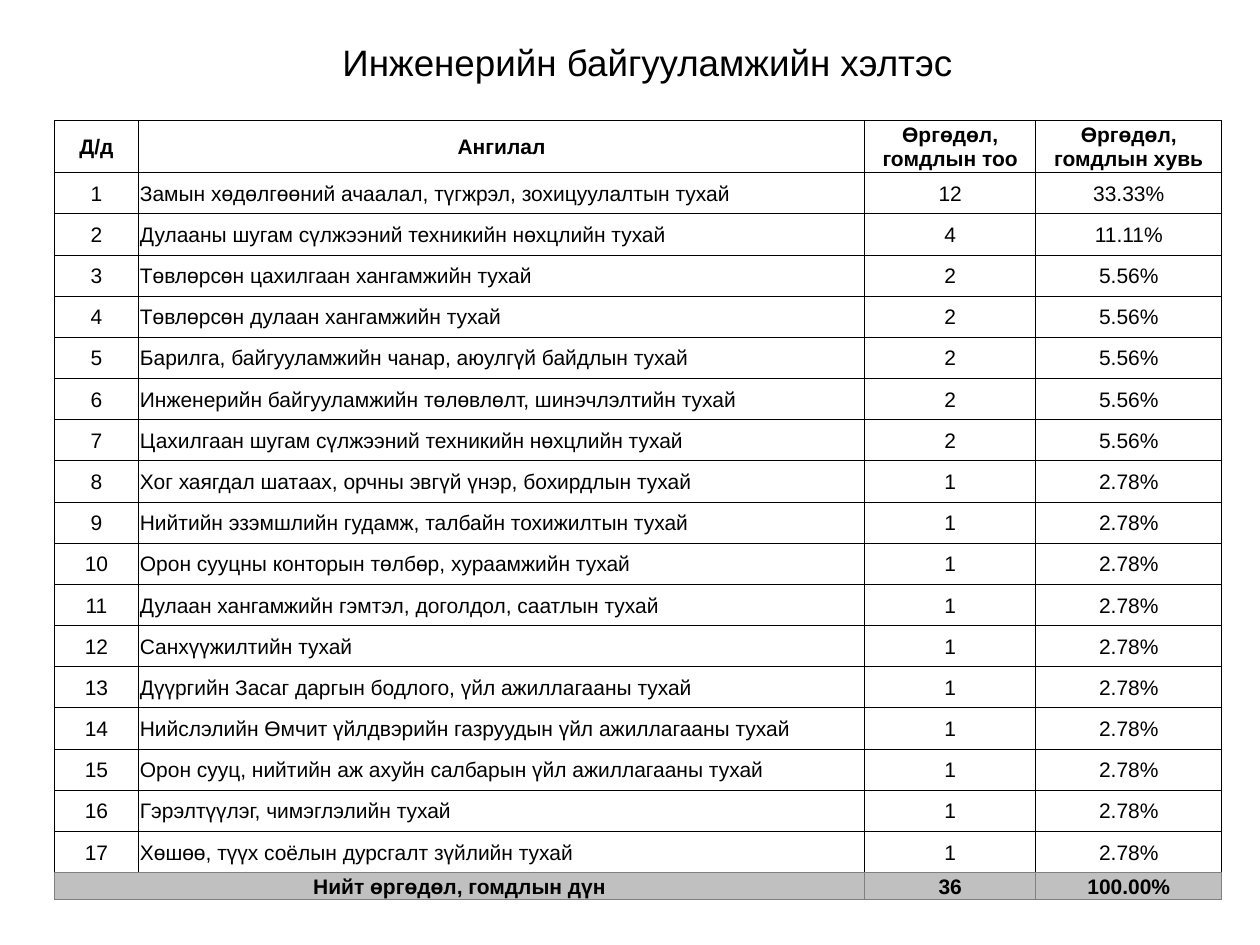
from dataclasses import dataclass
from typing import Any

from lxml.etree import SubElement
from pptx import Presentation
from pptx.dml.color import RGBColor
from pptx.enum.text import MSO_ANCHOR, PP_ALIGN
from pptx.oxml.ns import qn
from pptx.slide import Slide
from pptx.table import Table, _Cell
from pptx.util import Cm, Pt


@dataclass(frozen=True)
class Theme:
    """Colours, font and type sizes of the slide."""

    font: str = "Arial"
    title_size: float = 21
    table_size: float = 12
    text: str = "000000"
    paper: str = "FFFFFF"
    total_fill: str = "C0C0C0"
    grid: str = "000000"
    total_grid: str = "808080"
    grid_width: float = 0.5


@dataclass(frozen=True)
class Category:
    """A subject of complaints and how many were received."""

    name: str
    count: int


@dataclass(frozen=True)
class RowStyle:
    """The look shared by the cells of one kind of row."""

    height: float
    fill: str
    top: str
    side: str
    bottom: str
    bold: bool


THEME = Theme()
TITLE = "Инженерийн байгууламжийн хэлтэс"
HEADINGS = ("Д/д", "Ангилал", "Өргөдөл, гомдлын тоо", "Өргөдөл, гомдлын хувь")
TOTAL_LABEL = "Нийт өргөдөл, гомдлын дүн"
COLUMN_WIDTHS = (1.69, 14.64, 3.45, 3.75)
NAME_COLUMN = 1

HEADER = RowStyle(1.05, THEME.paper, THEME.grid, THEME.grid, THEME.grid, True)
BODY = RowStyle(0.83, THEME.paper, THEME.grid, THEME.grid, THEME.grid, False)
LAST = RowStyle(0.83, THEME.paper, THEME.grid, THEME.grid, THEME.total_grid, False)
TOTAL = RowStyle(
    0.54, THEME.total_fill, THEME.total_grid, THEME.total_grid, THEME.total_grid, True
)

CATEGORIES = (
    Category("Замын хөдөлгөөний ачаалал, түгжрэл, зохицуулалтын тухай", 12),
    Category("Дулааны шугам сүлжээний техникийн нөхцлийн тухай", 4),
    Category("Төвлөрсөн цахилгаан хангамжийн тухай", 2),
    Category("Төвлөрсөн дулаан хангамжийн тухай", 2),
    Category("Барилга, байгууламжийн чанар, аюулгүй байдлын тухай", 2),
    Category("Инженерийн байгууламжийн төлөвлөлт, шинэчлэлтийн тухай", 2),
    Category("Цахилгаан шугам сүлжээний техникийн нөхцлийн тухай", 2),
    Category("Хог хаягдал шатаах, орчны эвгүй үнэр, бохирдлын тухай", 1),
    Category("Нийтийн эзэмшлийн гудамж, талбайн тохижилтын тухай", 1),
    Category("Орон сууцны конторын төлбөр, хураамжийн тухай", 1),
    Category("Дулаан хангамжийн гэмтэл, доголдол, саатлын тухай", 1),
    Category("Санхүүжилтийн тухай", 1),
    Category("Дүүргийн Засаг даргын бодлого, үйл ажиллагааны тухай", 1),
    Category("Нийслэлийн Өмчит үйлдвэрийн газруудын үйл ажиллагааны тухай", 1),
    Category("Орон сууц, нийтийн аж ахуйн салбарын үйл ажиллагааны тухай", 1),
    Category("Гэрэлтүүлэг, чимэглэлийн тухай", 1),
    Category("Хөшөө, түүх соёлын дурсгалт зүйлийн тухай", 1),
)


def apply(target: Any, values: dict[str, Any]) -> None:
    """Set each named attribute of the target."""
    for name, value in values.items():
        setattr(target, name, value)


def write(frame: Any, text: str, size: float, bold: bool, paragraph: dict[str, Any]) -> None:
    """Put one formatted paragraph in a text frame."""
    para = frame.paragraphs[0]
    apply(para, paragraph)
    span = para.add_run()
    span.text = text
    apply(span.font, {"name": THEME.font, "size": Pt(size), "bold": bold})
    span.font.color.rgb = RGBColor.from_string(THEME.text)


def add_title(page: Slide) -> None:
    """Place the title, set slightly right of its box centre."""
    box = page.shapes.title
    apply(box, {"left": Cm(1.52), "top": Cm(0.48), "width": Cm(22.05), "height": Cm(1.63)})
    apply(
        box.text_frame,
        {"margin_left": Cm(1.27), "vertical_anchor": MSO_ANCHOR.MIDDLE, "word_wrap": True},
    )
    write(
        box.text_frame, TITLE, THEME.title_size, False,
        {"alignment": PP_ALIGN.CENTER, "line_spacing": 0.9},
    )


def draw_borders(cell: _Cell, style: RowStyle) -> None:
    """Draw the four edges of a cell."""
    properties = cell._tc.get_or_add_tcPr()
    edges = {"lnL": style.side, "lnR": style.side, "lnT": style.top, "lnB": style.bottom}
    for edge, colour in edges.items():
        line = SubElement(properties, qn(f"a:{edge}"), w=str(Pt(THEME.grid_width)))
        fill = SubElement(line, qn("a:solidFill"))
        SubElement(fill, qn("a:srgbClr"), val=colour)


def fill_row(table: Table, index: int, texts: tuple[str, ...], style: RowStyle) -> None:
    """Write and format one row of the table."""
    table.rows[index].height = Cm(style.height)
    for column, text in enumerate(texts):
        cell = table.cell(index, column)
        apply(cell, {
            "margin_left": Cm(0.03),
            "margin_right": Cm(0.03),
            "margin_top": Cm(0.03),
            "margin_bottom": Cm(0),
            "vertical_anchor": MSO_ANCHOR.MIDDLE,
        })
        draw_borders(cell, style)
        cell.fill.solid()
        cell.fill.fore_color.rgb = RGBColor.from_string(style.fill)
        is_name = column == NAME_COLUMN and not style.bold
        alignment = PP_ALIGN.LEFT if is_name else PP_ALIGN.CENTER
        if text:
            write(cell.text_frame, text, THEME.table_size, style.bold, {"alignment": alignment})


def add_complaints_table(page: Slide) -> None:
    """Build the table of complaints with shares and a total."""
    total = sum(category.count for category in CATEGORIES)
    rows = [(HEADINGS, HEADER)]
    for number, category in enumerate(CATEGORIES, start=1):
        texts = (str(number), category.name, str(category.count), f"{category.count / total:.2%}")
        rows.append((texts, LAST if number == len(CATEGORIES) else BODY))
    rows.append(((TOTAL_LABEL, "", str(total), f"{1:.2%}"), TOTAL))

    table = page.shapes.add_table(
        len(rows), len(HEADINGS), Cm(1.1), Cm(2.43),
        Cm(sum(COLUMN_WIDTHS)), Cm(sum(style.height for _, style in rows)),
    ).table
    apply(table, {"first_row": False, "horz_banding": False})
    for column, width in zip(table.columns, COLUMN_WIDTHS):
        column.width = Cm(width)
    for index, (texts, style) in enumerate(rows):
        fill_row(table, index, texts, style)
    bottom = len(rows) - 1
    table.cell(bottom, 0).merge(table.cell(bottom, NAME_COLUMN))


def main() -> None:
    """Build and save the deck."""
    deck = Presentation()
    apply(deck, {"slide_width": Cm(25.4), "slide_height": Cm(19.05)})
    page = deck.slides.add_slide(deck.slide_layouts[5])
    add_title(page)
    add_complaints_table(page)
    deck.save("out.pptx")


if __name__ == "__main__":
    main()
